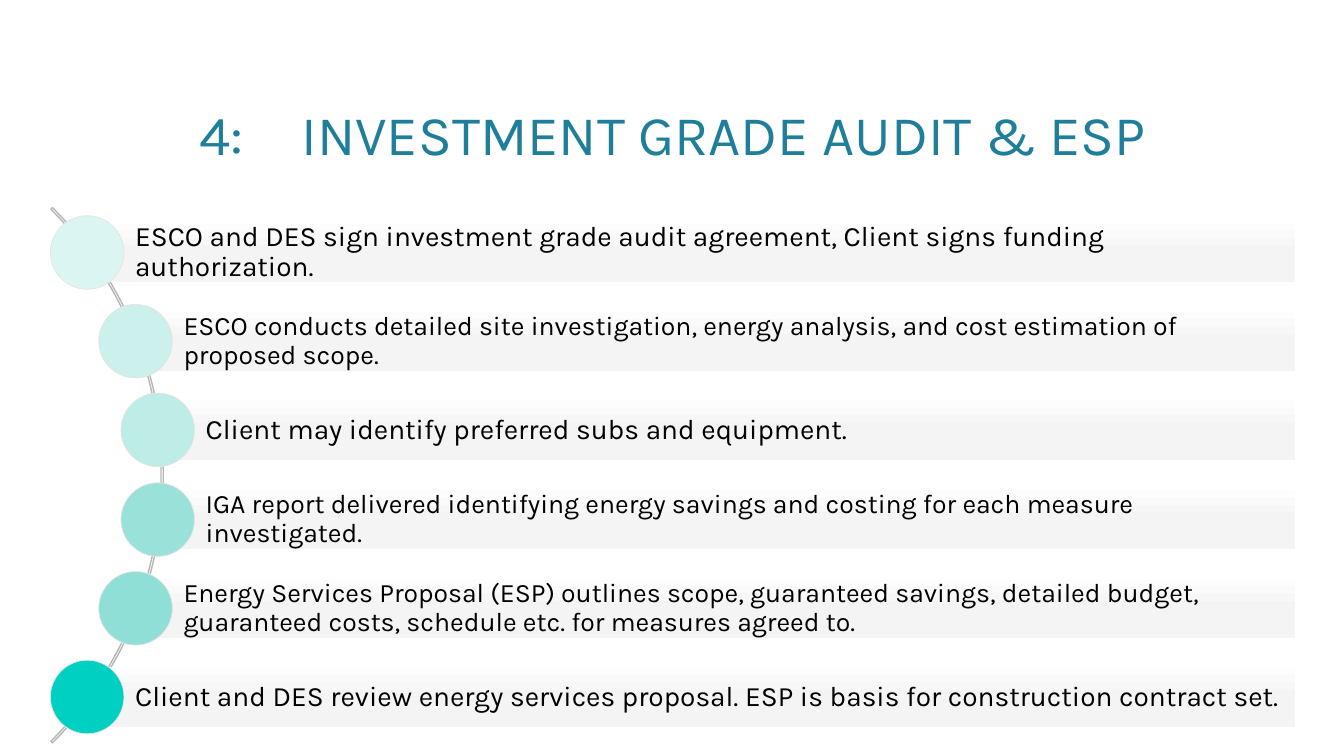
"""Build the investment grade audit slide: a title and six steps along an arc."""
from copy import deepcopy

from lxml.etree import SubElement
from pptx import Presentation
from pptx.dml.color import RGBColor
from pptx.enum.shapes import MSO_SHAPE
from pptx.enum.text import MSO_ANCHOR, MSO_AUTO_SIZE, PP_ALIGN
from pptx.oxml.ns import qn
from pptx.util import Pt

TITLE_SPANS = [("4:", -20), ("\tINVESTMENT GRADE AUDIT ", 0), ("& ESP", -10)]
STEPS = [
    ("ESCO and DES sign investment grade audit agreement, Client signs funding authorization.", 20, 50, "DBF5F2"),
    ("ESCO conducts detailed site investigation, energy analysis, and cost estimation of proposed scope.",
     19, 98, "CCF0EC"),
    ("Client may identify preferred subs and equipment.", 20, 120, "BEECE7"),
    ("IGA report delivered identifying energy savings and costing for each measure investigated.",
     19, 120, "9AE2D9"),
    ("Energy Services Proposal (ESP) outlines scope, guaranteed savings, detailed budget, "
     "guaranteed costs, schedule etc. for measures agreed to.", 19, 98, "90DFD6"),
    ("Client and DES review energy services proposal. ESP is basis for construction contract set.",
     20, 50, "00D0C1"),
]
COLORS = {"title": "1F7F9A", "text": "000000", "arc": "B7B7B7", "ring": "E5E4E4"}
BAR_STOPS = [(0, "FDFDFD"), (0.5, "F4F4F4"), (1, "F3F3F3")]
FONT = "Karla"
EMU_PER_PX = 9144
PAGE_SIZE = (1333, 750)
TITLE_AREA = (134, 97, 1066, 69)
TITLE_TAB = 101
ARC_AREA = (-589, 96, 751, 751)
ARC_ADJUSTMENTS = (189, 27, 0.003)
FIRST_TOP, PITCH, BAR_HEIGHT, BAR_RIGHT = 221, 88.2, 59, 1284
CIRCLE_SIZE = 73


def px(*lengths):
    return [round(length * EMU_PER_PX) for length in lengths]


def apply(target, formats):
    for name, value in formats.items():
        setattr(target, name, value)


def set_frame(frame, left, top, right, bottom):
    margins = zip(("left", "top", "right", "bottom"), px(left, top, right, bottom))
    apply(frame, {f"margin_{side}": value for side, value in margins})
    apply(frame, {"word_wrap": True, "vertical_anchor": MSO_ANCHOR.MIDDLE})


def set_font(font, size, color):
    apply(font, {"name": FONT, "size": Pt(size)})
    font.color.rgb = RGBColor.from_string(color)


def add_shape(page, kind, area, line_color=None, line_width=0):
    shape = page.shapes.add_shape(kind, *px(*area))
    shape.shadow.inherit = False
    if line_color:
        shape.line.color.rgb = RGBColor.from_string(line_color)
        shape.line.width = Pt(line_width)
    else:
        shape.line.fill.background()
    return shape


def add_title(page):
    box = page.shapes.add_textbox(*px(*TITLE_AREA))
    set_frame(box.text_frame, 0, 1, 0, 0)
    box.text_frame.auto_size = MSO_AUTO_SIZE.SHAPE_TO_FIT_TEXT
    para = box.text_frame.paragraphs[0]
    para.alignment = PP_ALIGN.CENTER
    tabs = SubElement(para._p.get_or_add_pPr(), qn("a:tabLst"))
    SubElement(tabs, qn("a:tab"), pos=str(px(TITLE_TAB)[0]), algn="l")
    for text, spacing in TITLE_SPANS:
        span = para.add_run()
        span.text = text
        set_font(span.font, 40, COLORS["title"])
        span._r.get_or_add_rPr().set("spc", str(spacing))


def add_arc(page):
    arc = add_shape(page, MSO_SHAPE.BLOCK_ARC, ARC_AREA, COLORS["arc"], 1)
    arc.fill.background()
    for index, value in enumerate(ARC_ADJUSTMENTS):
        arc.adjustments[index] = value


def fill_bar(bar):
    bar.fill.gradient()
    bar.fill.gradient_angle = 270
    stop_list = bar._element.spPr.find(qn("a:gradFill")).find(qn("a:gsLst"))
    stop_list.append(deepcopy(stop_list[0]))
    for stop, (position, color) in zip(bar.fill.gradient_stops, BAR_STOPS):
        stop.position = position
        stop.color.rgb = RGBColor.from_string(color)


def add_step(page, index, text, size, circle_left, color):
    top = FIRST_TOP + round(index * PITCH)
    bar_left = circle_left + CIRCLE_SIZE // 2 + 1
    bar = add_shape(page, MSO_SHAPE.RECTANGLE, (bar_left, top, BAR_RIGHT - bar_left, BAR_HEIGHT))
    fill_bar(bar)
    set_frame(bar.text_frame, 47, 5, 5, 5)
    para = bar.text_frame.paragraphs[0]
    apply(para, {"alignment": PP_ALIGN.LEFT, "line_spacing": 0.9})
    span = para.add_run()
    span.text = text
    set_font(span.font, size, COLORS["text"])
    circle_top = top - (CIRCLE_SIZE - BAR_HEIGHT) // 2
    circle = add_shape(page, MSO_SHAPE.OVAL, (circle_left, circle_top, CIRCLE_SIZE, CIRCLE_SIZE),
                       COLORS["ring"], 0.5)
    circle.fill.solid()
    circle.fill.fore_color.rgb = RGBColor.from_string(color)


def main():
    deck = Presentation()
    deck.slide_width, deck.slide_height = px(*PAGE_SIZE)
    page = deck.slides.add_slide(deck.slide_layouts[6])
    add_title(page)
    add_arc(page)
    for index, step in enumerate(STEPS):
        add_step(page, index, *step)
    deck.save("out.pptx")


if __name__ == "__main__":
    main()
